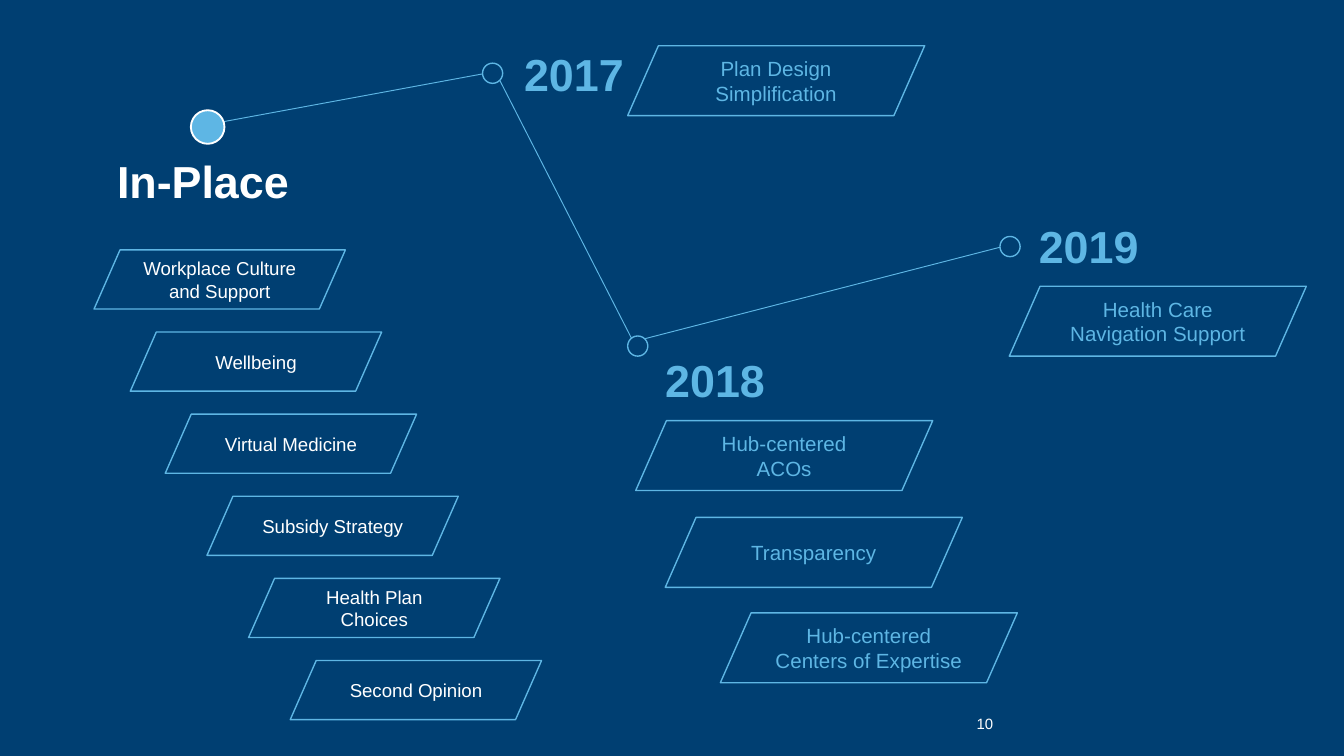
from dataclasses import dataclass

from lxml.etree import SubElement
from pptx import Presentation
from pptx.dml.color import RGBColor
from pptx.enum.shapes import MSO_CONNECTOR, MSO_SHAPE
from pptx.enum.text import MSO_ANCHOR, PP_ALIGN
from pptx.oxml.ns import qn
from pptx.slide import Slide
from pptx.util import Inches, Pt

COLORS = {"navy": "003F72", "sky": "5EB6E4", "white": "FFFFFF"}
FONT = "Arial"

# Square grid: 100 columns across the slide, rows of the same size
SLIDE_WIDTH = Inches(10)
SLIDE_HEIGHT = SLIDE_WIDTH * 9 // 16
CELL = SLIDE_WIDTH / 100


@dataclass(frozen=True)
class BoxStyle:
    width: float
    height: float
    font_size: int
    color: str


@dataclass(frozen=True)
class Box:
    column: float
    row: float
    text: str
    style: BoxStyle


@dataclass(frozen=True)
class Label:
    column: float
    row: float
    width: float
    height: float
    text: str
    color: str = "sky"
    size: int = 24
    bold: bool = True
    align: PP_ALIGN = PP_ALIGN.LEFT
    anchor: MSO_ANCHOR = MSO_ANCHOR.TOP
    line_spacing: float = 0.9


@dataclass(frozen=True)
class Dot:
    column: float
    row: float
    size: float = 1.5
    fill: str | None = None
    line: str = "sky"
    line_width: float = 0.75


@dataclass(frozen=True)
class Link:
    start: tuple[float, float]
    end: tuple[float, float]


CURRENT = BoxStyle(18.7, 4.4, 10, "white")
PLANNED = BoxStyle(22.1, 5.2, 11, "sky")

# Programs in place step down and to the right at an even row pitch
IN_PLACE_TOP, IN_PLACE_PITCH = 18.6, 6.11
IN_PLACE = [
    (7.0, "Workplace Culture\vand Support"),
    (9.7, "Wellbeing"),
    (12.3, "Virtual Medicine"),
    (15.4, "Subsidy Strategy"),
    (18.5, "Health Plan Choices"),
    (21.6, "Second Opinion"),
]
BOXES = [
    Box(column, IN_PLACE_TOP + index * IN_PLACE_PITCH, text, CURRENT)
    for index, (column, text) in enumerate(IN_PLACE)
] + [
    Box(46.7, 3.4, "Plan Design Simplification", PLANNED),
    Box(47.3, 31.3, "Hub-centered\nACOs", PLANNED),
    Box(49.5, 38.5, "Transparency", PLANNED),
    Box(53.6, 45.6, "Hub-centered Centers of Expertise", PLANNED),
    Box(75.1, 21.3, "Health Care Navigation Support", PLANNED),
]
LABELS = [
    Label(6.7, 11.9, 16.8, 3.6, "In-Place", "white", align=PP_ALIGN.CENTER),
    Label(39, 3.9, 20, 4.3, "2017"),
    Label(49.5, 26.7, 20, 3.6, "2018"),
    Label(77.3, 16.7, 20, 3.6, "2019"),
    Label(70, 53.2, 3.9, 1.3, "10", "white", 8, False,
          PP_ALIGN.RIGHT, MSO_ANCHOR.BOTTOM, 1.0),
]
LINKS = [
    Link((14.2, 9.5), (35.9, 5.5)),
    Link((37.2, 6.0), (47.0, 25.2)),
    Link((48.0, 25.2), (74.4, 18.4)),
]
DOTS = [
    Dot(14.2, 8.2, 2.5, "sky", "white", 1),
    Dot(35.9, 4.7),
    Dot(46.7, 25.0),
    Dot(74.4, 17.6),
]


def grid(*cells: float) -> list[int]:
    return [round(cell * CELL) for cell in cells]


def rgb(name: str) -> RGBColor:
    return RGBColor.from_string(COLORS[name])


def write_text(shape, text: str, size: int, color: str, align: PP_ALIGN,
               bold: bool = False, line_spacing: float = 1.0) -> None:
    frame = shape.text_frame
    frame.word_wrap = True
    frame.text = text
    for para in frame.paragraphs:
        para.alignment = align
        para.line_spacing = line_spacing
        para.font.name = FONT
        para.font.size = Pt(size)
        para.font.bold = bold
        para.font.color.rgb = rgb(color)


def set_margins(frame, margin: int) -> None:
    frame.margin_left = frame.margin_right = margin
    frame.margin_top = frame.margin_bottom = margin


def draw_box(page: Slide, box: Box) -> None:
    style = box.style
    shape = page.shapes.add_shape(
        MSO_SHAPE.PARALLELOGRAM,
        *grid(box.column, box.row, style.width, style.height))
    shape.adjustments[0] = 0.44
    shape.shadow.inherit = False
    shape.fill.background()
    shape.line.color.rgb = rgb("sky")
    shape.line.width = Pt(0.75)
    set_margins(shape.text_frame, Inches(0.1))
    shape.text_frame.vertical_anchor = MSO_ANCHOR.MIDDLE
    write_text(shape, box.text, style.font_size, style.color, PP_ALIGN.CENTER)


def draw_label(page: Slide, label: Label) -> None:
    shape = page.shapes.add_textbox(
        *grid(label.column, label.row, label.width, label.height))
    set_margins(shape.text_frame, 0)
    shape.text_frame.vertical_anchor = label.anchor
    write_text(shape, label.text, label.size, label.color, label.align,
               label.bold, label.line_spacing)


def draw_link(page: Slide, link: Link) -> None:
    line = page.shapes.add_connector(
        MSO_CONNECTOR.STRAIGHT, *grid(*link.start, *link.end))
    line.line.color.rgb = rgb("sky")
    line.line.width = Pt(0.5)
    SubElement(line._element.spPr, qn("a:effectLst"))


def draw_dot(page: Slide, dot: Dot) -> None:
    shape = page.shapes.add_shape(
        MSO_SHAPE.OVAL, *grid(dot.column, dot.row, dot.size, dot.size))
    shape.shadow.inherit = False
    if dot.fill:
        shape.fill.solid()
        shape.fill.fore_color.rgb = rgb(dot.fill)
    else:
        shape.fill.background()
    shape.line.color.rgb = rgb(dot.line)
    shape.line.width = Pt(dot.line_width)


def main() -> None:
    deck = Presentation()
    deck.slide_width, deck.slide_height = SLIDE_WIDTH, SLIDE_HEIGHT
    page = deck.slides.add_slide(deck.slide_layouts.get_by_name("Blank"))
    page.background.fill.solid()
    page.background.fill.fore_color.rgb = rgb("navy")

    # Program boxes and headings
    for box in BOXES:
        draw_box(page, box)
    for label in LABELS:
        draw_label(page, label)

    # Timeline: the large dot covers the start of the first link
    for link in LINKS:
        draw_link(page, link)
    for dot in DOTS:
        draw_dot(page, dot)

    deck.save("out.pptx")


if __name__ == "__main__":
    main()
